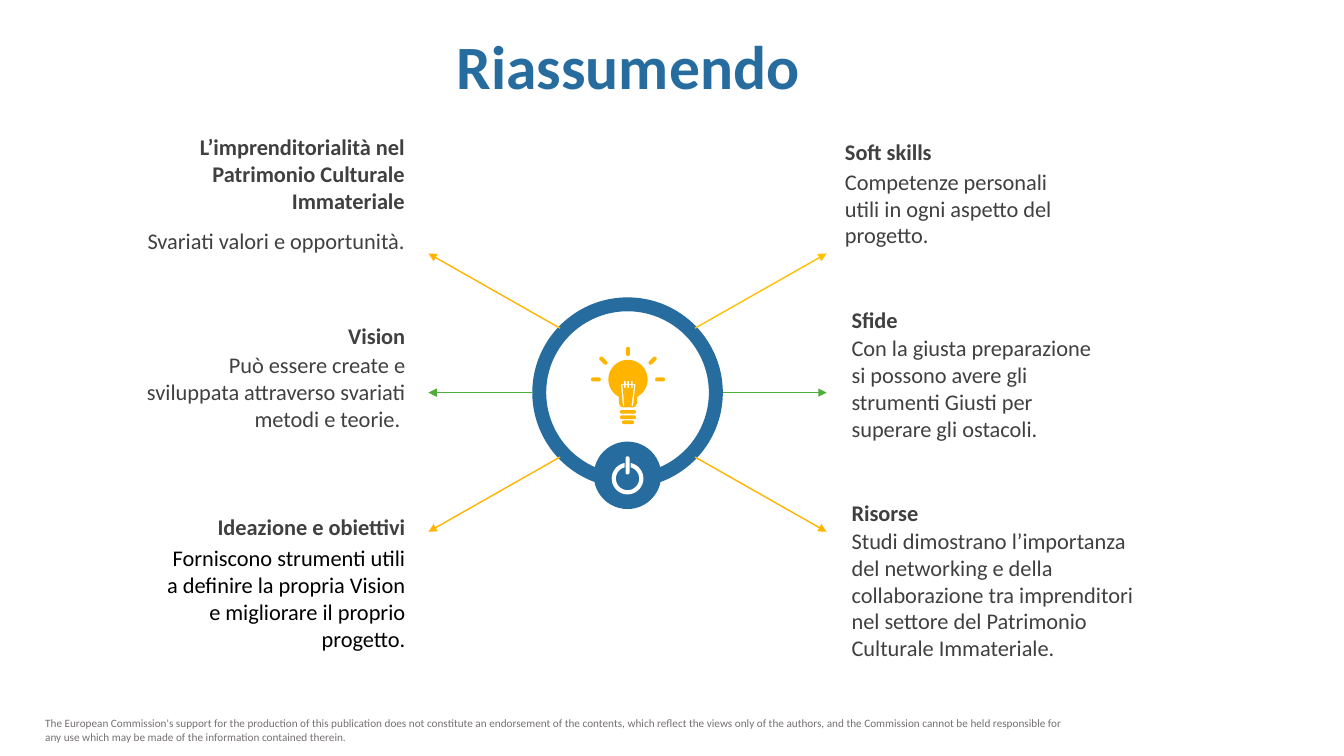
from collections import namedtuple
from math import cos, radians, sin

from lxml.etree import SubElement
from pptx import Presentation
from pptx.dml.color import RGBColor
from pptx.enum.shapes import MSO_CONNECTOR as Connector, MSO_SHAPE as Shape
from pptx.enum.text import MSO_ANCHOR as Anchor, MSO_AUTO_SIZE as AutoSize, PP_ALIGN as Align
from pptx.oxml.ns import qn
from pptx.util import Pt

COLORS = {
    "blue": "266C9F",
    "amber": "FFB500",
    "gold": "FFC000",
    "green": "4EAE3A",
    "white": "FFFFFF",
    "dark": "404040",
    "black": "000000",
    "gray": "767171",
}
UNITS = 100

Box = namedtuple("Box", "left top width height")
Topic = namedtuple("Topic", "box head_size body_height head body color", defaults=["dark"])

LEFT_TOPICS = [
    Topic(Box(70.6, 85, 225.7, 114.4), (225.4, 77.8), 54.7,
          "L’imprenditorialità nel Patrimonio Culturale Immateriale",
          ["Svariati valori e opportunità."]),
    Topic(Box(94.3, 226.1, 202.3, 86.4), (177.1, 26.6), 65.5, "Vision",
          ["Può essere create e sviluppata attraverso svariati metodi e teorie. "]),
    Topic(Box(105.1, 362.9, 191.5, 106.6), (177.1, 26.6), 85, "Ideazione e obiettivi",
          ["Forniscono strumenti utili a definire la propria Vision e migliorare il proprio",
           "progetto."], "black"),
]
RIGHT_TOPICS = [
    Topic(Box(596.5, 95, 177.1, 86.4), (177.1, 26.6), 65.5, "Soft skills",
          ["Competenze personali utili in ogni aspetto del progetto."]),
    Topic(Box(601.2, 212.4, 198.7, 107.3), (198.7, 32.4), 85, "Sfide",
          ["Con la giusta preparazione si possono avere gli strumenti Giusti per superare "
           "gli ostacoli."]),
    Topic(Box(601.2, 352.8, 220.3, 123.8), (177.1, 26.6), 104.4, "Risorse",
          ["Studi dimostrano l’importanza del networking e della collaborazione tra "
           "imprenditori nel settore del Patrimonio Culturale Immateriale."]),
]


def color(name):
    return RGBColor.from_string(COLORS[name])


def add_text(slide, box, paragraphs, size, color_name, bold=False,
             align=Align.LEFT, anchor=Anchor.TOP, spacing=None, grow=True):
    frame = slide.shapes.add_textbox(*map(Pt, box)).text_frame
    frame.word_wrap = True
    frame.vertical_anchor = anchor
    frame.auto_size = AutoSize.SHAPE_TO_FIT_TEXT if grow else AutoSize.NONE
    frame.text = "\n".join(paragraphs)
    for paragraph in frame.paragraphs:
        paragraph.alignment = align
        paragraph.line_spacing = spacing
        font = paragraph.font
        font.name = "Calibri"
        font.size = Pt(size)
        font.bold = bold
        font.color.rgb = color(color_name)


def paint(shape, color_name):
    shape.shadow.inherit = False
    shape.fill.solid()
    shape.fill.fore_color.rgb = color(color_name)
    shape.line.fill.background()


def add_preset(slide, kind, box, color_name):
    shape = slide.shapes.add_shape(kind, *map(Pt, box))
    paint(shape, color_name)
    return shape


def arc(radius, start, end, center=(0, 0), steps=48):
    angles = [radians(start + (end - start) * step / steps) for step in range(steps + 1)]
    return [(center[0] + radius * cos(angle), center[1] + radius * sin(angle))
            for angle in angles]


def capsule(x, y, length, thickness, angle=0):
    reach = (length - thickness) / 2
    points = []
    for direction in (angle, angle + 180):
        end = (x + reach * cos(radians(direction)), y + reach * sin(radians(direction)))
        points += arc(thickness / 2, direction - 90, direction + 90, end, 8)
    return points


def add_outline(slide, center, contours, color_name):
    paths = [[((center[0] + x) * UNITS, (center[1] + y) * UNITS) for x, y in contour]
             for contour in contours]
    builder = slide.shapes.build_freeform(*paths[0][0], scale=Pt(1) / UNITS)
    builder.add_line_segments(paths[0][1:])
    for path in paths[1:]:
        builder.move_to(*path[0])
        builder.add_line_segments(path[1:])
    paint(builder.convert_to_shape(), color_name)


def filament():
    coils = (-2.3, 0.2, 2.7)
    upper = [point for x in coils
             for point in ((x - 0.6, 3.3), (x - 0.6, 1.1), (x + 0.6, 1.1), (x + 0.6, 3.3))]
    lower = [point for x in reversed(coils)
             for point in ((x + 0.6, 4), (x + 0.6, 6.1), (x - 0.6, 6.1), (x - 0.6, 4))]
    return ([(-5, 3.3)] + upper + [(5.4, 3.3), (3.6, 19), (2.5, 19), (4.4, 4)]
            + lower + [(-4, 4), (-2.6, 19), (-3.6, 19)])


def draw_bulb(slide, center):
    glass = arc(14, 117.7, 422.3) + [(6.5, 17), (5.5, 19.2), (3.5, 20),
                                     (-3.5, 20), (-5.5, 19.2), (-6.5, 17)]
    rays = [capsule(0, -20, 6.5, 2.9, 90)]
    for side in (-1, 1):
        rays.append(capsule(side * 22.9, 0, 7, 2.9))
        rays.append(capsule(side * 17.6, -13.4, 7, 2.9, side * -45))
    base = [capsule(0, y, width, 2.6) for y, width in ((23.2, 11.5), (27, 11.5), (30.6, 8.6))]
    add_outline(slide, center, [glass, filament()] + rays + base, "amber")


def draw_power_button(slide, box):
    add_preset(slide, Shape.OVAL, box, "blue")
    center = (box.left + box.width / 2, box.top + box.height / 2 + 2.3)
    ring = arc(11.3, -79, 259) + arc(8.3, 255, -75)
    add_outline(slide, center, [ring, capsule(0, -9.4, 13, 2.9, 90)], "white")


def add_arrow(slide, start, end, color_name):
    connector = slide.shapes.add_connector(Connector.STRAIGHT, *map(Pt, (*start, *end)))
    connector.line.color.rgb = color(color_name)
    connector.line.width = Pt(1)
    SubElement(connector.line._get_or_add_ln(), qn("a:tailEnd"), type="triangle")
    SubElement(connector._element.spPr, qn("a:effectLst"))


def draw_hub(slide, box):
    x, y = box.left + box.width / 2, box.top + box.height / 2
    ring = add_preset(slide, Shape.DONUT, box, "blue")
    ring.adjustments[0] = 0.073
    draw_power_button(slide, Box(x - 24.1, y + 35, 48.2, 48.2))
    draw_bulb(slide, (x + 0.3, y - 9.4))
    for side in (-1, 1):
        add_arrow(slide, (x + side * 68, y), (x + side * 142.2, y), "green")
        for direction in (-1, 1):
            tint = "gold" if (side, direction) == (1, -1) else "amber"
            add_arrow(slide, (x + side * 48.2, y + direction * 46),
                      (x + side * 142.2, y + direction * 99.4), tint)


def draw_topic(slide, topic, align):
    box = topic.box
    head_width, head_height = topic.head_size
    head_left = box.left + (box.width - head_width if align == Align.RIGHT else 0)
    body_top = box.top + box.height - topic.body_height
    add_text(slide, Box(box.left, body_top, box.width, topic.body_height), topic.body,
             16, topic.color, align=align, anchor=Anchor.MIDDLE)
    add_text(slide, Box(head_left, box.top, head_width, head_height), [topic.head],
             16, "dark", True, align, Anchor.MIDDLE)


def draw_title(slide, box):
    add_text(slide, box, ["Riassumendo"], 44, "blue", True, Align.CENTER,
             spacing=0.9, grow=False)


def draw_disclaimer(slide, box):
    add_text(slide, box, [
        "The European Commission's support for the production of this publication does not "
        "constitute an endorsement of the contents, which reflect the views only of the "
        "authors, and the Commission cannot be held responsible for any use which may be "
        "made of the information contained therein."], 8, "gray")


def main():
    presentation = Presentation()
    presentation.slide_width, presentation.slide_height = Pt(960), Pt(540)
    slide = presentation.slides.add_slide(presentation.slide_layouts[6])
    draw_disclaimer(slide, Box(25.2, 508.3, 753.1, 26.6))
    draw_title(slide, Box(206.6, 22.3, 484.6, 56.9))
    draw_hub(slide, Box(380.2, 212.4, 136.1, 136.1))
    for topics, align in ((LEFT_TOPICS, Align.RIGHT), (RIGHT_TOPICS, Align.LEFT)):
        for topic in topics:
            draw_topic(slide, topic, align)
    presentation.save("out.pptx")


if __name__ == "__main__":
    main()
